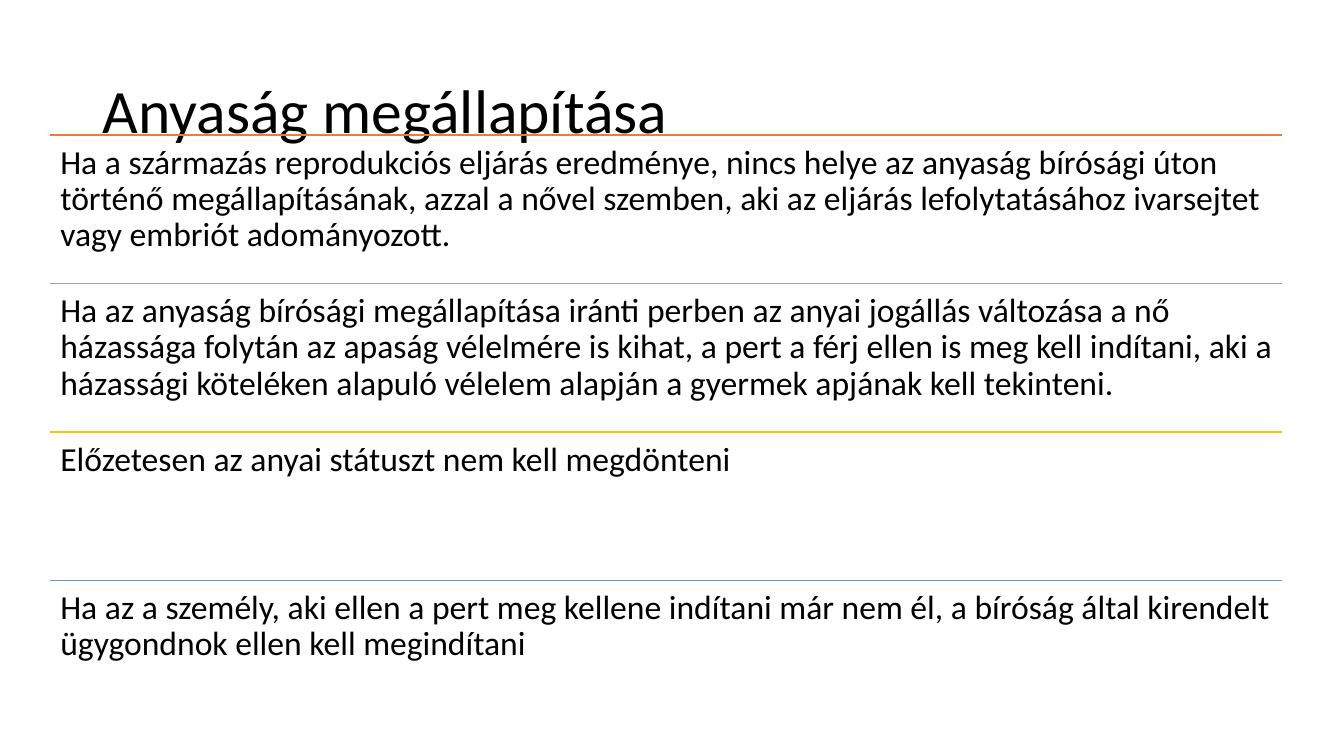
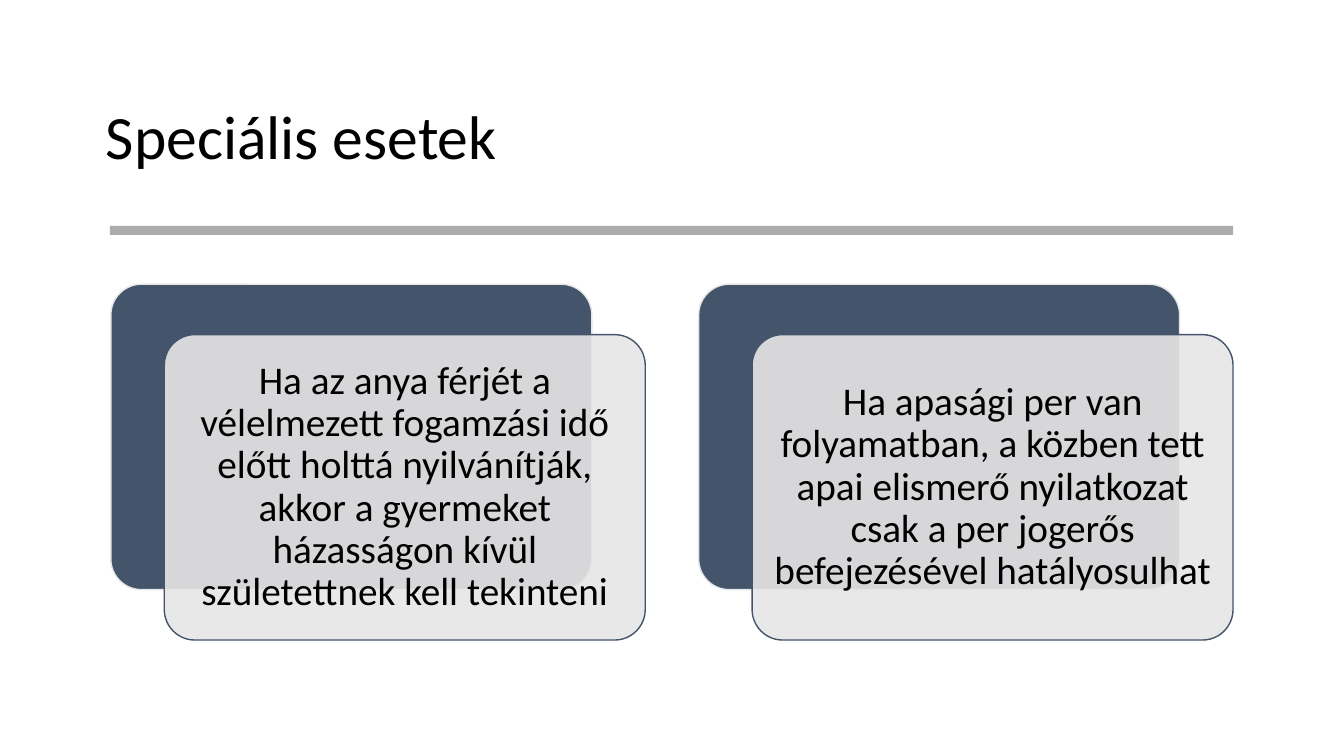
from dataclasses import dataclass

from pptx import Presentation
from pptx.dml.color import RGBColor
from pptx.enum.shapes import MSO_CONNECTOR, MSO_SHAPE
from pptx.enum.text import MSO_ANCHOR, MSO_AUTO_SIZE, PP_ALIGN
from pptx.oxml.ns import qn
from pptx.oxml.xmlchemy import OxmlElement
from pptx.presentation import Presentation as Deck
from pptx.shapes.autoshape import Shape
from pptx.slide import Slide
from pptx.util import Inches, Pt

STRAIGHT = MSO_CONNECTOR.STRAIGHT
RECTANGLE, ROUNDED = MSO_SHAPE.RECTANGLE, MSO_SHAPE.ROUNDED_RECTANGLE
TOP, MIDDLE = MSO_ANCHOR.TOP, MSO_ANCHOR.MIDDLE
LEFT, CENTER = PP_ALIGN.LEFT, PP_ALIGN.CENTER
NO_AUTOFIT = MSO_AUTO_SIZE.NONE
TITLE_ONLY = 5


@dataclass(frozen=True)
class Theme:
    font: str = "Calibri"
    text: str = "000000"
    navy: str = "44546A"
    pale: str = "E7E6E6"
    bar: str = "808080"
    title_size: int = 44
    row_size: int = 24
    card_size: int = 28
    line_spacing: float = 0.9
    line_width: int = 1


@dataclass(frozen=True)
class Box:
    """A rectangle in inches."""
    left: float
    top: float
    width: float
    height: float

    def moved(self, right: float = 0, down: float = 0) -> "Box":
        return Box(self.left + right, self.top + down, self.width, self.height)

    def lengths(self) -> tuple[int, int, int, int]:
        return (Inches(self.left), Inches(self.top),
                Inches(self.width), Inches(self.height))


@dataclass(frozen=True)
class Row:
    colour: str
    text: str


THEME = Theme()
SLIDE = Box(0, 0, 13.33, 7.5)

ROWS_AREA = Box(0.5, 1.34, 12.22, 5.89)
ROWS = (
    Row("ED7D31", "Ha a származás reprodukciós eljárás eredménye, nincs helye az "
        "anyaság bírósági úton történő megállapításának, azzal a nővel szemben, aki "
        "az eljárás lefolytatásához ivarsejtet vagy embriót adományozott."),
    Row("A5A5A5", "Ha az anyaság bírósági megállapítása iránti perben az anyai "
        "jogállás változása a nő házassága folytán az apaság vélelmére is kihat, a "
        "pert a férj ellen is meg kell indítani, aki a házassági köteléken alapuló "
        "vélelem alapján a gyermek apjának kell tekinteni."),
    Row("FFC000", "Előzetesen az anyai státuszt nem kell megdönteni"),
    Row("5B9BD5", "Ha az a személy, aki ellen a pert meg kellene indítani már nem "
        "él, a bíróság által kirendelt ügygondnok ellen kell megindítani"),
)

FIRST_CARD = Box(1.1, 2.82, 4.77, 3.03)
CARD_PITCH = 5.83
CARD_SHIFT = (0.53, 0.5)
CARD_TEXTS = (
    "Ha az anya férjét a vélelmezett fogamzási idő előtt holttá nyilvánítják, "
    "akkor a gyermeket házasságon kívül születettnek kell tekinteni",
    "Ha apasági per van folyamatban, a közben tett apai elismerő nyilatkozat "
    "csak a per jogerős befejezésével hatályosulhat",
)


def write(shape: Shape, text: str, size: int, align: PP_ALIGN = LEFT,
          anchor: MSO_ANCHOR = TOP, inset: float = 0.1) -> None:
    frame = shape.text_frame
    frame.text = text
    frame.word_wrap = True
    frame.auto_size = NO_AUTOFIT
    frame.vertical_anchor = anchor
    frame.margin_left = frame.margin_right = Inches(inset)
    frame.margin_top = frame.margin_bottom = Inches(inset)
    for para in frame.paragraphs:
        para.alignment = align
        para.line_spacing = THEME.line_spacing
        for span in para.runs:
            span.font.name = THEME.font
            span.font.size = Pt(size)
            span.font.color.rgb = RGBColor.from_string(THEME.text)


def add_page(deck: Deck, title: str, box: Box) -> Slide:
    page = deck.slides.add_slide(deck.slide_layouts[TITLE_ONLY])
    holder = page.shapes.title
    holder.left, holder.top, holder.width, holder.height = box.lengths()
    write(holder, title, THEME.title_size, anchor=MIDDLE)
    return page


def add_panel(page: Slide, kind: MSO_SHAPE, box: Box, fill: str,
              line: str | None = None, opacity: int = 100) -> Shape:
    """Add a filled shape; opacity is a percentage."""
    panel = page.shapes.add_shape(kind, *box.lengths())
    panel.shadow.inherit = False
    panel.fill.solid()
    panel.fill.fore_color.rgb = RGBColor.from_string(fill)
    if opacity < 100:
        alpha = OxmlElement("a:alpha")
        alpha.set("val", str(opacity * 1000))
        panel.element.spPr.find(qn("a:solidFill"))[0].append(alpha)
    if line is None:
        panel.line.fill.background()
    else:
        panel.line.color.rgb = RGBColor.from_string(line)
        panel.line.width = Pt(THEME.line_width)
    if kind == ROUNDED:
        panel.adjustments[0] = 0.1
    return panel


def add_row(page: Slide, box: Box, row: Row) -> None:
    left, top, width, height = box.lengths()
    rule = page.shapes.add_connector(STRAIGHT, left, top, left + width, top)
    rule.line.color.rgb = RGBColor.from_string(row.colour)
    rule.line.width = Pt(THEME.line_width)
    rule.element.spPr.append(OxmlElement("a:effectLst"))
    label = page.shapes.add_textbox(left, top, width, height)
    write(label, row.text, THEME.row_size)


def add_card(page: Slide, back: Box, text: str) -> None:
    add_panel(page, ROUNDED, back, THEME.navy, THEME.pale)
    front = add_panel(page, ROUNDED, back.moved(*CARD_SHIFT), THEME.pale,
                      THEME.navy, opacity=90)
    write(front, text, THEME.card_size, CENTER, MIDDLE, inset=0.12)


def build_maternity(deck: Deck) -> None:
    page = add_page(deck, "Anyaság megállapítása", Box(0.92, 0.4, 11.5, 1.45))
    pitch = ROWS_AREA.height / len(ROWS)
    first = Box(ROWS_AREA.left, ROWS_AREA.top, ROWS_AREA.width, pitch)
    for index, row in enumerate(ROWS):
        add_row(page, first.moved(down=index * pitch), row)


def build_special_cases(deck: Deck) -> None:
    page = add_page(deck, "Speciális esetek", Box(0.95, 0.66, 11.43, 1.45))
    add_panel(page, RECTANGLE, Box(1.09, 2.24, 11.14, 0.09), THEME.bar, opacity=65)
    for index, text in enumerate(CARD_TEXTS):
        add_card(page, FIRST_CARD.moved(right=index * CARD_PITCH), text)


def main() -> None:
    deck = Presentation()
    deck.slide_width, deck.slide_height = SLIDE.lengths()[2:]
    build_maternity(deck)
    build_special_cases(deck)
    deck.save("out.pptx")


if __name__ == "__main__":
    main()
